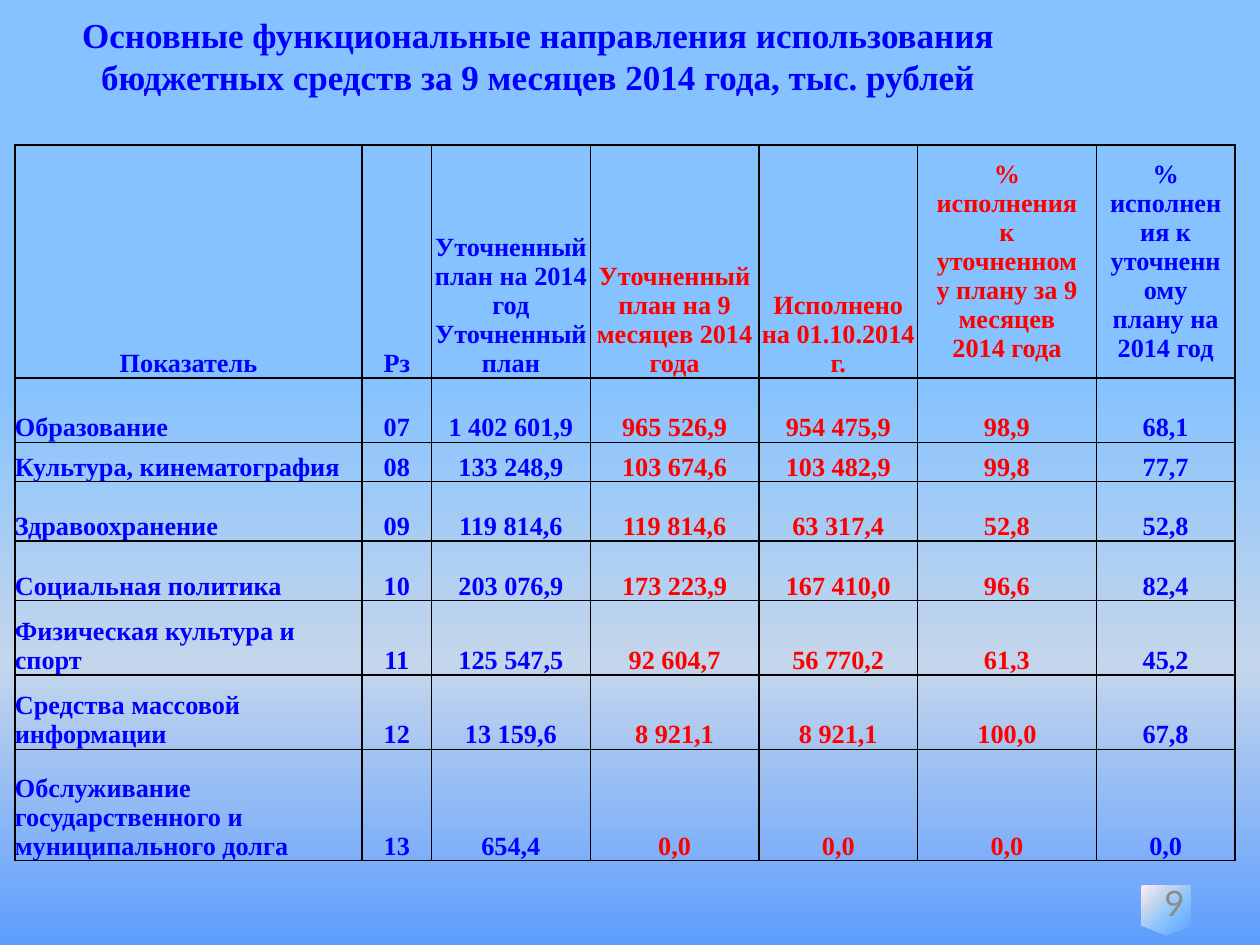
from dataclasses import dataclass

from lxml import etree
from pptx import Presentation
from pptx import util as u
from pptx.dml.color import RGBColor
from pptx.enum import shapes, text
from pptx.oxml import ns

BLUE = RGBColor(0x00, 0x00, 0xFF)
RED = RGBColor(0xFF, 0x00, 0x00)
GREY = RGBColor(0x8C, 0x8C, 0x8C)
BLACK = RGBColor(0x00, 0x00, 0x00)
DEEP = RGBColor(0x5E, 0x9E, 0xFF)
SKY = RGBColor(0x85, 0xC2, 0xFF)
MIST = RGBColor(0xC4, 0xD6, 0xEB)
PINK = RGBColor(0xFF, 0xEB, 0xFA)

SERIF_BOLD = {"name": "Times New Roman", "bold": True}
LEFT, CENTER, RIGHT = text.PP_ALIGN.LEFT, text.PP_ALIGN.CENTER, text.PP_ALIGN.RIGHT
MIDDLE, BOTTOM = text.MSO_ANCHOR.MIDDLE, text.MSO_ANCHOR.BOTTOM
MARGINS = ("margin_left", "margin_top", "margin_right", "margin_bottom")


@dataclass
class Column:
    header: str
    width: float  # cm
    color: RGBColor = BLUE
    align: int = CENTER
    padded_header: bool = False


@dataclass
class Row:
    height: float  # cm
    values: tuple


COLUMNS = [
    Column("Показатель", 7.0, align=LEFT),
    Column("Рз", 1.4),
    Column("Уточненный план на 2014 год\nУточненный план", 3.2),
    Column("Уточненный план на 9 месяцев 2014 года", 3.4, RED),
    Column("Исполнено на 01.10.2014 г.", 3.2, RED),
    Column("% исполнения к уточненному плану за 9 месяцев 2014 года", 3.6, RED,
           padded_header=True),
    Column("% исполнения к уточненному плану на 2014 год", 2.8, padded_header=True),
]

ROWS = [
    Row(4.6, tuple(c.header for c in COLUMNS)),
    Row(1.3, ("Образование", "07", "1 402 601,9", "965 526,9", "954 475,9", "98,9", "68,1")),
    Row(0.79, ("Культура, кинематография", "08", "133 248,9", "103 674,6", "103 482,9",
               "99,8", "77,7")),
    Row(1.2, ("Здравоохранение", "09", "119 814,6", "119 814,6", "63 317,4", "52,8", "52,8")),
    Row(1.2, ("Социальная политика", "10", "203 076,9", "173 223,9", "167 410,0",
              "96,6", "82,4")),
    Row(1.5, ("Физическая культура и спорт", "11", "125 547,5", "92 604,7", "56 770,2",
              "61,3", "45,2")),
    Row(1.5, ("Средства массовой информации", "12", "13 159,6", "8 921,1", "8 921,1",
              "100,0", "67,8")),
    Row(2.24, ("Обслуживание государственного и муниципального долга", "13", "654,4",
               "0,0", "0,0", "0,0", "0,0")),
]


def add_node(parent, tag: str, **attrs):
    return etree.SubElement(parent, ns.qn(tag), {k: str(v) for k, v in attrs.items()})


def set_gradient(fill, owner, stops: list, radial: bool = False) -> None:
    """Give a fill its (percent, colour) stops, running down or from the lower right."""
    fill.gradient()
    grad = owner.find(".//" + ns.qn("a:gradFill"))
    for child in list(grad):
        grad.remove(child)
    gs_list = add_node(grad, "a:gsLst")
    for percent, color in stops:
        add_node(add_node(gs_list, "a:gs", pos=percent * 1000), "a:srgbClr", val=color)
    if radial:
        path = add_node(grad, "a:path", path="circle")
        add_node(path, "a:fillToRect", l=100000, t=100000)
    else:
        add_node(grad, "a:lin", ang=5400000, scaled=0)


def write(tf, content: str, align: int, color: RGBColor, font: dict) -> None:
    for i, line in enumerate(content.split("\n")):
        p = tf.add_paragraph() if i else tf.paragraphs[0]
        p.alignment = align
        r = p.add_run()
        r.text = line
        for name, value in font.items():
            setattr(r.font, name, value)
        r.font.color.rgb = color


def add_text(s, box: tuple, content: str, align: int, color: RGBColor, font: dict,
             anchor: int) -> None:
    tf = s.shapes.add_textbox(*map(u.Cm, box)).text_frame
    tf.word_wrap = True
    tf.vertical_anchor = anchor
    write(tf, content, align, color, font)


def add_borders(cell) -> None:
    tc_pr = cell._tc.get_or_add_tcPr()
    for i, side in enumerate(("a:lnL", "a:lnR", "a:lnT", "a:lnB")):
        ln = etree.Element(ns.qn(side), w=str(u.Pt(1)))
        add_node(add_node(ln, "a:solidFill"), "a:srgbClr", val=BLACK)
        tc_pr.insert(i, ln)


def add_budget_table(s, left: float, top: float) -> None:
    size = sum(c.width for c in COLUMNS), sum(r.height for r in ROWS)
    table = s.shapes.add_table(len(ROWS), len(COLUMNS),
                               *map(u.Cm, (left, top, *size))).table
    table.first_row = table.horz_banding = False
    for j, column in enumerate(COLUMNS):
        table.columns[j].width = u.Cm(column.width)
    for i, row in enumerate(ROWS):
        table.rows[i].height = u.Cm(row.height)
        for j, (column, value) in enumerate(zip(COLUMNS, row.values)):
            cell = table.cell(i, j)
            header = i == 0
            padded = header and column.padded_header
            cell.vertical_anchor = MIDDLE if padded else BOTTOM
            if not padded:
                for margin in MARGINS:
                    setattr(cell, margin, 0)
            cell.fill.background()
            add_borders(cell)
            write(cell.text_frame, value, CENTER if header else column.align,
                  column.color, {**SERIF_BOLD, "size": u.Pt(15)})


def main() -> None:
    prs = Presentation()
    prs.slide_width, prs.slide_height = u.Cm(25.4), u.Cm(19.05)
    s = prs.slides.add_slide(prs.slide_layouts[6])

    # Background
    set_gradient(s.background.fill, s._element, [(40, SKY), (70, MIST), (100, DEEP)])

    # Page number on its badge
    badge = s.shapes.add_shape(shapes.MSO_SHAPE.FLOWCHART_OFFPAGE_CONNECTOR,
                               *map(u.Cm, (23.01, 17.85, 1, 1)))
    badge.shadow.inherit = False
    badge.line.fill.background()
    set_gradient(badge.fill, badge._element,
                 [(0, DEEP), (40, SKY), (70, MIST), (100, PINK)], radial=True)
    add_text(s, (18.2, 17.65, 5.93, 1.1), "9", RIGHT, GREY,
             {"name": "Lato", "size": u.Pt(20)}, MIDDLE)

    # Budget table
    add_budget_table(s, 0.3, 2.92)

    # Title
    add_text(s, (0, 0.15, 21.7, 1.96),
             "Основные функциональные направления использования "
             "бюджетных средств за 9 месяцев 2014 года, тыс. рублей",
             CENTER, BLUE, {**SERIF_BOLD, "size": u.Pt(20)}, text.MSO_ANCHOR.TOP)

    prs.save("out.pptx")


if __name__ == "__main__":
    main()
